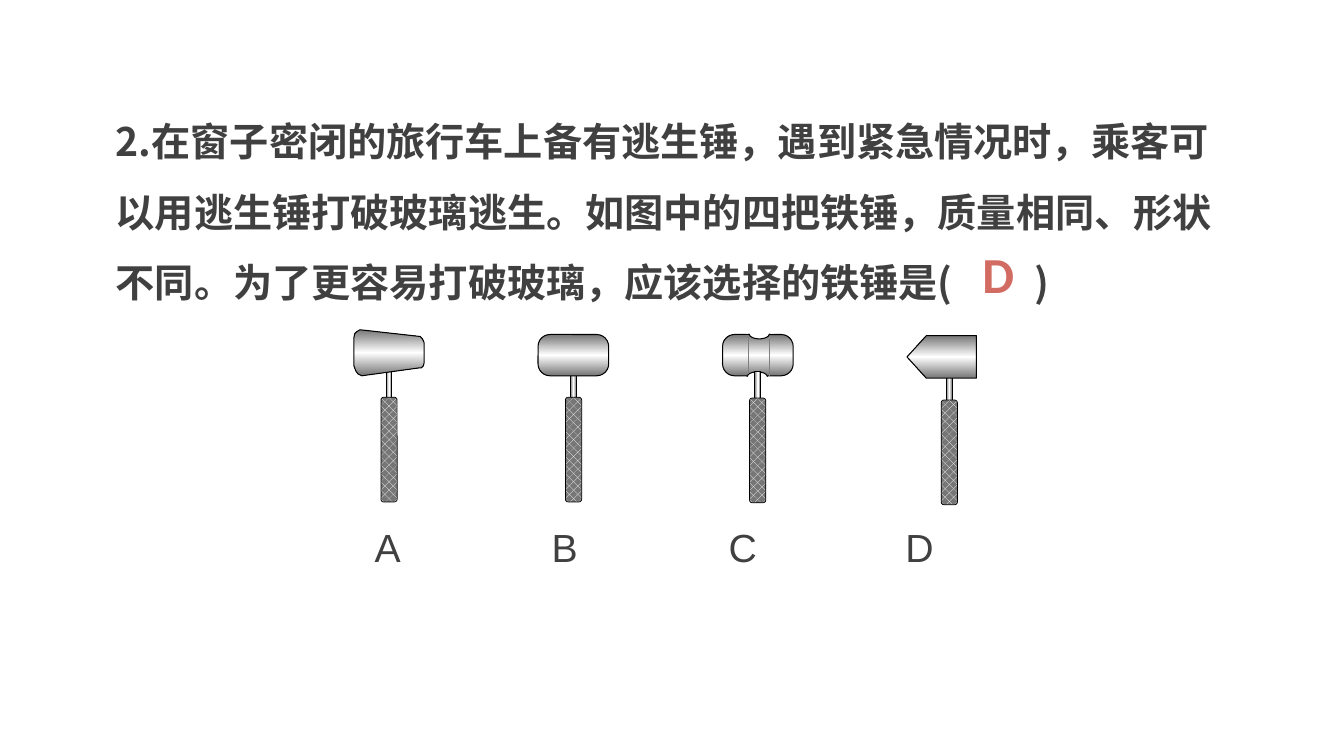
from copy import deepcopy
from lxml.etree import SubElement
from pptx import Presentation
from pptx.dml.color import RGBColor
from pptx.enum.dml import MSO_PATTERN
from pptx.enum.shapes import MSO_CONNECTOR, MSO_SHAPE as SHAPE
from pptx.oxml.ns import qn
from pptx.util import Cm, Pt

QUESTION = ("2.在窗子密闭的旅行车上备有逃生锤，遇到紧急情况时，乘客可以用逃生锤打破玻璃逃生。"
            "如图中的四把铁锤，质量相同、形状不同。为了更容易打破玻璃，应该选择的铁锤是(\t)")
ANSWER = "D"
OPTIONS = ["A", "B", "C", "D"]
OPTION_STEP = 4.46
BRACKET_STOP = 23.16

INK, RED, STEEL, WHITE, BLACK, SEAM = "404040", "D26B62", "767676", "FFFFFF", "000000", "808080"

HANDLES = {"A": (9.73, 9.35), "B": (14.38, 9.35), "C": (19.02, 9.37), "D": (23.85, 9.42)}
HEADS = {
    "B": (SHAPE.ROUNDED_RECTANGLE, (13.56, 8.43, 1.78, 1.04), 0.29),
    "C": (SHAPE.ROUNDED_RECTANGLE, (18.21, 8.43, 1.78, 1.04), 0.29),
    "D": (SHAPE.PENTAGON, (22.86, 8.46, 1.75, 1.07), 0.453),
}
WEDGE_HEAD = [(1069, 864), (1067, 859), (1064, 853), (1059, 848), (907, 831), (899, 836),
              (894, 841), (892, 851), (892, 922), (897, 935), (902, 942), (912, 947),
              (1057, 927), (1062, 927), (1067, 922), (1069, 914)]
NOTCHES = [((18.87, 8.26, 0.53, 0.28), (18.8, 8.05, 0.71, 0.36)),
           ((18.82, 9.37, 0.53, 0.28), (18.72, 9.5, 0.71, 0.33))]
SEAMS = [(19.38, 8.53), (18.87, 8.48)]
SEAM_LENGTH = 0.94

deck = Presentation()
deck.slide_width, deck.slide_height = Cm(33.87), Cm(19.05)
slide = deck.slides.add_slide(deck.slide_layouts[6])
shapes = slide.shapes


def color(hex_string):
    return RGBColor.from_string(hex_string)


def add_text(box, text, font_name, size, ink, bold=False, stops=()):
    frame = shapes.add_textbox(*map(Cm, box)).text_frame
    frame.word_wrap = True
    paragraph = frame.paragraphs[0]
    paragraph.add_run().text = text
    font = paragraph.font
    font.name, font.size, font.bold = font_name, Pt(size), bold
    font.color.rgb = color(ink)
    properties = paragraph._p.get_or_add_pPr()
    defaults = properties.find(qn("a:defRPr"))
    SubElement(defaults, qn("a:ea")).set("typeface", font_name)
    if stops:
        tabs = SubElement(properties, qn("a:tabLst"))
        defaults.addprevious(tabs)
        for stop in stops:
            SubElement(tabs, qn("a:tab"), pos=str(Cm(stop)), algn="l")
    return paragraph


def outline(shape, width):
    shape.shadow.inherit = False
    if width:
        shape.line.color.rgb = color(BLACK)
        shape.line.width = Pt(width)
    else:
        shape.line.fill.background()


def add_part(kind, box, width, corner=None):
    part = shapes.add_shape(kind, *map(Cm, box))
    if corner:
        part.adjustments[0] = corner
    outline(part, width)
    return part


def paint_white(part):
    part.fill.solid()
    part.fill.fore_color.rgb = color(WHITE)


def paint_metal(part, angle):
    part.fill.gradient()
    part.fill.gradient_angle = angle
    stop_list = part._element.spPr.find(qn("a:gradFill")).find(qn("a:gsLst"))
    stop_list.append(deepcopy(stop_list[0]))
    for stop, position, tone in zip(part.fill.gradient_stops, (0, 0.5, 1), (STEEL, WHITE, STEEL)):
        stop.position = position
        stop.color.rgb = color(tone)


def add_handle(option):
    left, top = HANDLES[option]
    rod = add_part(SHAPE.RECTANGLE, (left, top, 0.15, 0.76), 0.75)
    paint_metal(rod, 0)
    grip = add_part(SHAPE.ROUNDED_RECTANGLE, (left - 0.13, top + 0.66, 0.41, 2.64), 0.5, 0.167)
    grip.fill.patterned()
    grip.fill.pattern = MSO_PATTERN.WEAVE
    grip.fill.fore_color.rgb = color(WHITE)
    grip.fill.back_color.rgb = color(STEEL)


def add_head(option):
    if option in HEADS:
        kind, box, corner = HEADS[option]
        head = add_part(kind, box, 0.75, corner)
    else:
        builder = shapes.build_freeform(*WEDGE_HEAD[0], scale=Cm(0.01))
        builder.add_line_segments(WEDGE_HEAD[1:], close=True)
        head = builder.convert_to_shape()
        outline(head, 0.75)
    paint_metal(head, 90)
    if option == "D":
        head._element.spPr.find(qn("a:xfrm")).set("flipH", "1")


def add_notches():
    for curve, cover in NOTCHES:
        paint_white(add_part(SHAPE.OVAL, curve, 0.75))
        paint_white(add_part(SHAPE.RECTANGLE, cover, None))


def add_seams():
    for x, top in SEAMS:
        seam = shapes.add_connector(MSO_CONNECTOR.STRAIGHT, Cm(x), Cm(top), Cm(x), Cm(top + SEAM_LENGTH))
        seam.line.color.rgb = color(SEAM)
        seam.line.width = Pt(0.5)
        SubElement(seam._element.spPr, qn("a:effectLst"))


question = add_text((2.67, 2.24, 28.4, 5.64), QUESTION, "Noto Sans CJK SC", 28, INK, True, [BRACKET_STOP])
question.line_spacing = 1.5
add_text((24.51, 5.99, 1.78, 1.8), ANSWER, "Calibri", 36, RED, True)
add_text((9.19, 13.06, 17.96, 1.55), "\t".join(OPTIONS), "Arial", 28, INK,
         stops=[OPTION_STEP * i for i in range(1, len(OPTIONS))])

for option in OPTIONS:
    if option == "C":
        add_head(option)
        add_notches()
        add_handle(option)
        add_seams()
    else:
        add_handle(option)
        add_head(option)

deck.save("out.pptx")
